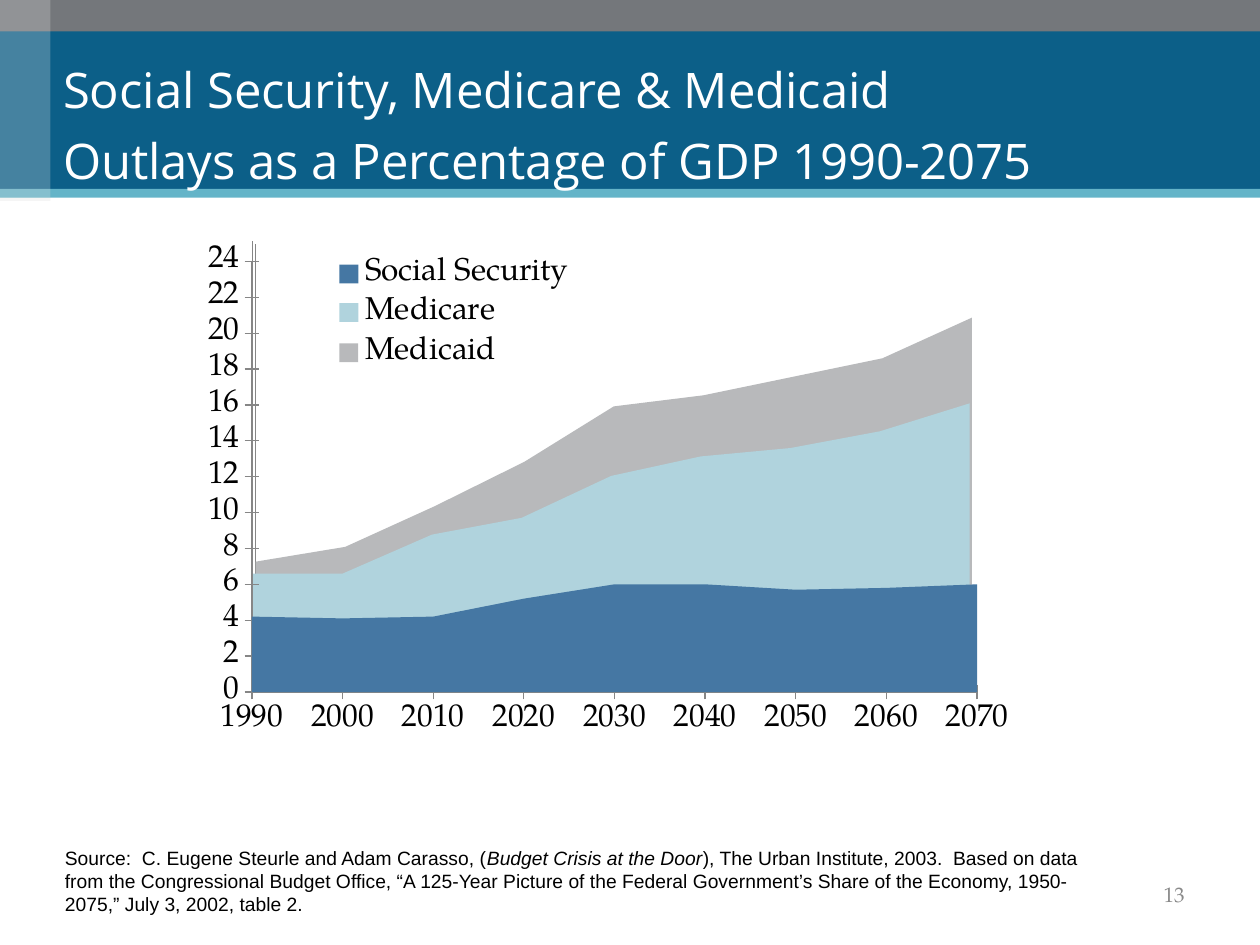
from lxml.etree import SubElement
from pptx import Presentation
from pptx.chart.data import CategoryChartData
from pptx.dml.color import RGBColor
from pptx.enum.chart import XL_CHART_TYPE, XL_LEGEND_POSITION, XL_TICK_LABEL_POSITION, XL_TICK_MARK
from pptx.enum.shapes import MSO_SHAPE
from pptx.enum.text import MSO_ANCHOR, PP_ALIGN
from pptx.oxml import parse_xml
from pptx.oxml.ns import nsdecls, qn
from pptx.util import Pt

COLORS = {
    "band": "0C5F88", "top": "74777B", "rule": "64B4C8", "white": "FFFFFF",
    "black": "000000", "page": "898989", "axis": "868686",
    "security": "4577A3", "medicare": "B0D3DD", "medicaid": "B8B9BB",
}
SERIF = "TeX Gyre Pagella"


def rgb(name):
    return RGBColor.from_string(COLORS[name])


def layout(target, **parts):
    """Return a manual chart layout; parts are fractions of the chart size."""
    inner = f'<c:layoutTarget val="{target}"/>' if target else ""
    inner += "".join(f'<c:{key}Mode val="edge"/>' for key in "xy")
    inner += "".join(f'<c:{key} val="{val:.4f}"/>' for key, val in parts.items())
    return parse_xml(f'<c:layout {nsdecls("c")}><c:manualLayout>{inner}'
                     '</c:manualLayout></c:layout>')


class Deck:
    """Holds the style and the current slide; boxes are (left, top, width, height)."""

    def __init__(self):
        self.show = Presentation()
        self.show.slide_width, self.show.slide_height = Pt(720), Pt(540)
        self.slide = self.show.slides.add_slide(self.show.slide_layouts[6])

    def rect(self, box, color):
        shape = self.slide.shapes.add_shape(MSO_SHAPE.RECTANGLE, *map(Pt, box))
        shape.shadow.inherit = False
        shape.fill.solid()
        shape.fill.fore_color.rgb = rgb(color)
        shape.line.fill.background()
        return shape

    def glass(self, box):
        """Add a translucent white strip with a thin shadow below it."""
        props = self.rect(box, "white").element.spPr
        tint = props.find(".//" + qn("a:srgbClr"))
        SubElement(tint, qn("a:alpha"), val="21000")
        cast = SubElement(props.find(qn("a:effectLst")), qn("a:outerShdw"),
                          blurRad="0", dist="22860", dir="5400000", rotWithShape="0")
        shade = SubElement(cast, qn("a:srgbClr"), val="808080")
        SubElement(shade, qn("a:alpha"), val="35000")

    def text(self, box, lines, font, size, color, anchor=MSO_ANCHOR.TOP,
             align=PP_ALIGN.LEFT, inset=(7.2, 3.6), wrap=True, space=None):
        """Add one paragraph; each line is a list of (text, italic) runs."""
        frame = self.slide.shapes.add_textbox(*map(Pt, box)).text_frame
        frame.word_wrap = wrap
        frame.vertical_anchor = anchor
        frame.margin_left = frame.margin_right = Pt(inset[0])
        frame.margin_top = frame.margin_bottom = Pt(inset[1])
        para = frame.paragraphs[0]
        para.alignment, para.line_spacing = align, space
        para.font.size = Pt(size)
        for index, line in enumerate(lines):
            if index:
                para.add_line_break()
            for words, italic in line:
                run = para.add_run()
                run.text = words
                run.font.name, run.font.size = font, Pt(size)
                run.font.italic = italic
                run.font.color.rgb = rgb(color)

    def area(self, box, plot, key, cats, name, vals, color, top, step, labels=False):
        """Add a one-series area chart; key is the legend corner on the slide."""
        data = CategoryChartData()
        data.categories = cats
        data.add_series(name, vals)
        chart = self.slide.shapes.add_chart(
            XL_CHART_TYPE.AREA_STACKED, *map(Pt, box), data).chart
        chart.has_title = False
        chart.font.name, chart.font.size = SERIF, Pt(18)
        chart.font.color.rgb = rgb("black")
        fill = chart.plots[0].series[0].format.fill
        fill.solid()
        fill.fore_color.rgb = rgb(color)

        for axis in (chart.category_axis, chart.value_axis):
            axis.has_major_gridlines = False
            axis.minor_tick_mark = XL_TICK_MARK.NONE
            axis.major_tick_mark = XL_TICK_MARK.CROSS if labels else XL_TICK_MARK.NONE
            axis.tick_label_position = (XL_TICK_LABEL_POSITION.NEXT_TO_AXIS if labels
                                        else XL_TICK_LABEL_POSITION.NONE)
            axis.format.line.color.rgb = rgb("axis")
            axis.format.line.width = Pt(0.75)
        scale = chart.value_axis
        scale.minimum_scale, scale.maximum_scale, scale.major_unit = 0, top, step
        scale._element.find(qn("c:crossBetween")).set("val", "midCat")

        region = chart.element.find(".//" + qn("c:plotArea"))
        for old in region.findall(qn("c:layout")):
            region.remove(old)
        region.insert(0, layout("inner", **dict(zip("xywh", plot))))

        chart.has_legend = True
        chart.legend.position = XL_LEGEND_POSITION.RIGHT
        chart.legend.include_in_layout = False
        legend = chart.element.find(".//" + qn("c:legend"))
        for old in legend.findall(qn("c:layout")):
            legend.remove(old)
        left, high, width, height = box
        place = layout("", x=(key[0] - left) / width, y=(key[1] - high) / height)
        legend.find(qn("c:legendPos")).addnext(place)


def main():
    deck = Deck()
    deck.rect((0, 0, 720, 108), "band")
    deck.rect((0, 0, 720, 18), "top")
    deck.rect((0, 108, 720, 5), "rule")
    deck.glass((0, 0, 28.8, 113))

    ranks = [str(num) for num in range(1, 10)]
    years = [str(year) for year in range(1990, 2071, 10)]
    back = (138.2, 131.8, 417.6, 267.5)
    deck.area(back, (0.021, 0.028, 0.981, 0.948), (188, 189), ranks, "Medicaid",
              (34, 38, 49, 61, 76, 79, 84, 89, 100), "medicaid", 120, 10)
    deck.area(back, (0.015, 0.023, 0.981, 0.943), (188, 166), ranks, "Medicare",
              (39, 39, 53, 59, 74, 81, 84, 90, 100), "medicare", 158, 13)
    deck.text((36, 18, 558, 90),
              [[("Social Security, Medicare & Medicaid", False)],
               [("Outlays as a Percentage of GDP 1990-2075", False)]],
              "Open Sans", 28, "white", MSO_ANCHOR.BOTTOM,
              inset=(0, 0), wrap=False, space=1.2)
    deck.area((102.2, 126, 480.2, 324.7), (0.087, 0.072, 0.863, 0.758), (188, 144),
              years, "Social Security", (4.2, 4.1, 4.2, 5.2, 6, 6, 5.7, 5.8, 6),
              "security", 24, 2, labels=True)

    deck.text((516, 492, 168, 37.4), [[("13", False)]], SERIF, 12, "page",
              MSO_ANCHOR.MIDDLE, PP_ALIGN.RIGHT)
    deck.text((30, 480, 600, 46.8), [[
        ("Source:  C. Eugene Steurle and Adam Carasso, (", False),
        ("Budget Crisis at the Door", True),
        ("), The Urban Institute, 2003.  Based on data from the Congressional Budget "
         "Office, “A 125-Year Picture of the Federal Government’s Share of the Economy, "
         "1950-2075,” July 3, 2002, table 2.", False),
    ]], "Arial", 11, "black")
    deck.show.save("out.pptx")


if __name__ == "__main__":
    main()
